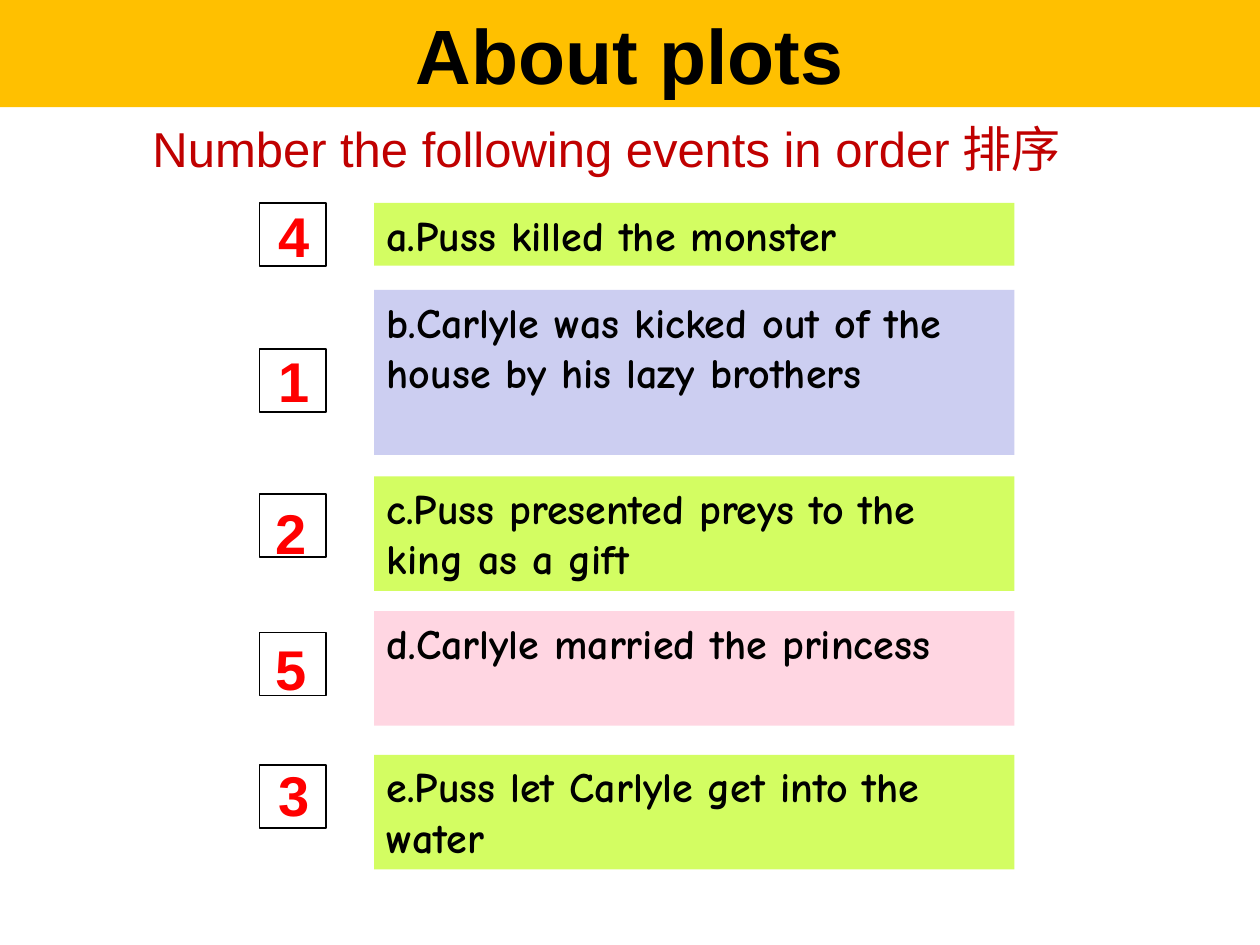
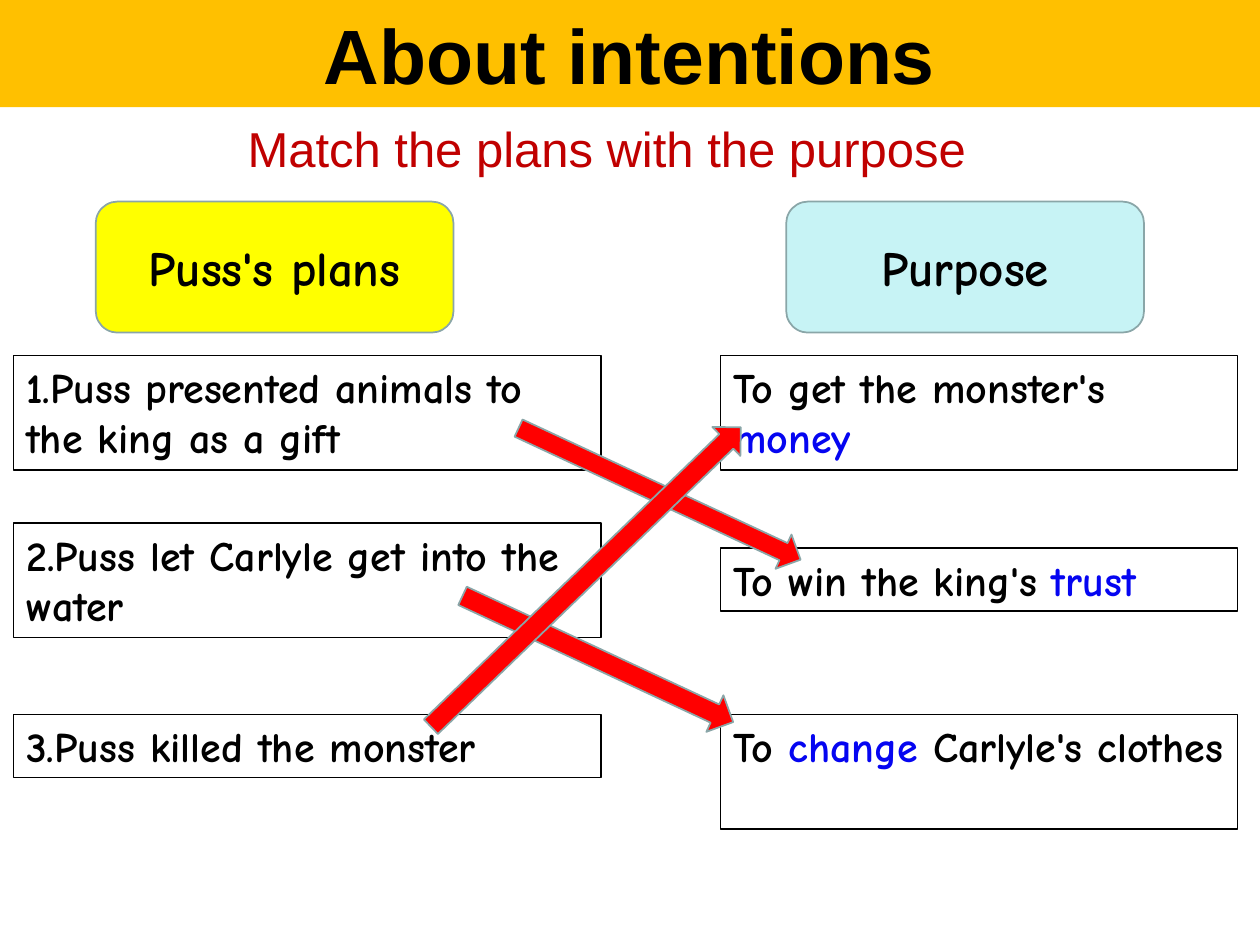
from pptx import Presentation
from pptx.dml.color import RGBColor
from pptx.enum.shapes import MSO_SHAPE
from pptx.enum.text import MSO_ANCHOR, PP_ALIGN
from pptx.util import Inches, Pt

RECT = MSO_SHAPE.RECTANGLE
ROUNDED = MSO_SHAPE.ROUNDED_RECTANGLE
ARROW = MSO_SHAPE.RIGHT_ARROW
LEFT, CENTER = PP_ALIGN.LEFT, PP_ALIGN.CENTER
TOP, MIDDLE = MSO_ANCHOR.TOP, MSO_ANCHOR.MIDDLE

BLACK = RGBColor(0x00, 0x00, 0x00)
WHITE = RGBColor(0xFF, 0xFF, 0xFF)
AMBER = RGBColor(0xFF, 0xC0, 0x00)
DARK_RED = RGBColor(0xC0, 0x00, 0x00)
RED = RGBColor(0xFF, 0x00, 0x00)
BLUE = RGBColor(0x05, 0x05, 0xF1)
LIME = RGBColor(0xD3, 0xFD, 0x62)
LAVENDER = RGBColor(0xCC, 0xCE, 0xF1)
PINK = RGBColor(0xFF, 0xD6, 0xE2)
YELLOW = RGBColor(0xFF, 0xFF, 0x00)
AQUA = RGBColor(0xC7, 0xF3, 0xF5)
GREY_TEAL = RGBColor(0x8A, 0xA6, 0xA8)

PLAIN_FONT = "Arial"
STORY_FONT = "Comic Neue"
SLIDE_WIDTH, SLIDE_HEIGHT = 10, 7.5
ONE_LINE, TWO_LINES, THREE_LINES = 0.5, 0.91, 1.31


def add_panel(slide, kind, box, fill, line=None, line_width=1):
    panel = slide.shapes.add_shape(kind, *map(Inches, box))
    panel.shadow.inherit = False
    panel.fill.solid()
    panel.fill.fore_color.rgb = fill
    if line is None:
        panel.line.fill.background()
    else:
        panel.line.color.rgb = line
        panel.line.width = Pt(line_width)
    return panel


def add_label(slide, box):
    return slide.shapes.add_textbox(*map(Inches, box))


def write(shape, pieces, size, font=STORY_FONT, color=BLACK, bold=True,
          align=LEFT, anchor=TOP):
    """Fill a shape with one paragraph; every second piece is highlighted."""
    frame = shape.text_frame
    frame.word_wrap = True
    frame.vertical_anchor = anchor
    paragraph = frame.paragraphs[0]
    paragraph.alignment = align
    for index, piece in enumerate(pieces):
        run = paragraph.add_run()
        run.text = piece
        run.font.name = font
        run.font.size = Pt(size)
        run.font.bold = bold
        run.font.color.rgb = BLUE if index % 2 else color


def add_heading(slide, title, task):
    # Title band
    band = add_panel(slide, RECT, (0, 0, SLIDE_WIDTH, 0.85), AMBER)
    write(band, [title], 44, PLAIN_FONT, align=CENTER, anchor=MIDDLE)
    # Task line
    task_line = add_label(slide, (0, 0.85, 9.63, 0.64))
    task_line.text_frame.margin_top = Inches(0.09)
    write(task_line, [task], 28, PLAIN_FONT, DARK_RED, False, CENTER)


def add_events(slide, left, top, events):
    """Number boxes on the left, the events to be ordered on the right."""
    for text, fill, event_y, height, box_y, answer, answer_x, answer_y in events:
        event = add_panel(slide, RECT, (left + 0.91, top + event_y, 5.08, height), fill)
        write(event, [text], 24)
        add_panel(slide, RECT, (left, top + box_y, 0.53, 0.5), WHITE, BLACK)
        number = add_label(slide, (left + answer_x, top + answer_y, 0.49, 0.64))
        write(number, [answer], 32, PLAIN_FONT, RED)


def add_column(slide, box, header, header_x, header_fill, cards):
    """A rounded header above a column of outlined cards."""
    left, top, width = box
    header_panel = add_panel(slide, ROUNDED, (left + header_x, top, 2.84, 1.04),
                             header_fill, GREY_TEAL)
    write(header_panel, [header], 28, align=CENTER, anchor=MIDDLE)
    for card_y, height, pieces in cards:
        card = add_panel(slide, RECT, (left, top + card_y, width, height),
                         WHITE, BLACK, 0.75)
        write(card, pieces, 24)


def add_match_arrows(slide, arrows):
    for box, angle in arrows:
        arrow = add_panel(slide, ARROW, box, RED, GREY_TEAL)
        arrow.rotation = angle


def build_plots(slide):
    add_heading(slide, "About plots", "Number the following events in order 排序")
    # Text, fill, event top, height, box top, answer, answer left, answer top
    add_events(slide, 2.06, 1.61, [
        ("a.Puss killed the monster", LIME, 0, ONE_LINE, 0, "4", 0.05, -0.06),
        ("b.Carlyle was kicked out of the house by his lazy brothers",
         LAVENDER, 0.69, THREE_LINES, 1.16, "1", 0.05, 1.09),
        ("c.Puss presented preys to the king as a gift",
         LIME, 2.17, TWO_LINES, 2.31, "2", 0.03, 2.3),
        ("d.Carlyle married the princess",
         PINK, 3.24, TWO_LINES, 3.41, "5", 0.03, 3.38),
        ("e.Puss let Carlyle get into the water",
         LIME, 4.38, TWO_LINES, 4.46, "3", 0.05, 4.38),
    ])


def build_intentions(slide):
    add_heading(slide, "About intentions", "Match the plans with the purpose")
    add_column(slide, (0.11, 1.6, 4.66), "Puss's plans", 0.65, YELLOW, [
        (1.22, TWO_LINES, ["1.Puss presented animals to the king as a gift"]),
        (2.55, TWO_LINES, ["2.Puss let Carlyle get into the water"]),
        (4.07, ONE_LINE, ["3.Puss killed the monster"]),
    ])
    add_column(slide, (5.72, 1.6, 4.1), "Purpose", 0.52, AQUA, [
        (1.22, TWO_LINES, ["To get the monster's ", "money"]),
        (2.75, ONE_LINE, ["To win the king's ", "trust"]),
        (4.07, TWO_LINES, ["To ", "change", " Carlyle's clothes"]),
    ])
    add_match_arrows(slide, [
        ((4, 3.77, 2.47, 0.3), 25),
        ((3.56, 5.07, 2.37, 0.32), 25),
        ((2.94, 4.42, 3.42, 0.32), 316),
    ])


def main():
    deck = Presentation()
    deck.slide_width = Inches(SLIDE_WIDTH)
    deck.slide_height = Inches(SLIDE_HEIGHT)
    blank = deck.slide_layouts[6]
    for build in (build_plots, build_intentions):
        build(deck.slides.add_slide(blank))
    deck.save("out.pptx")


if __name__ == "__main__":
    main()
